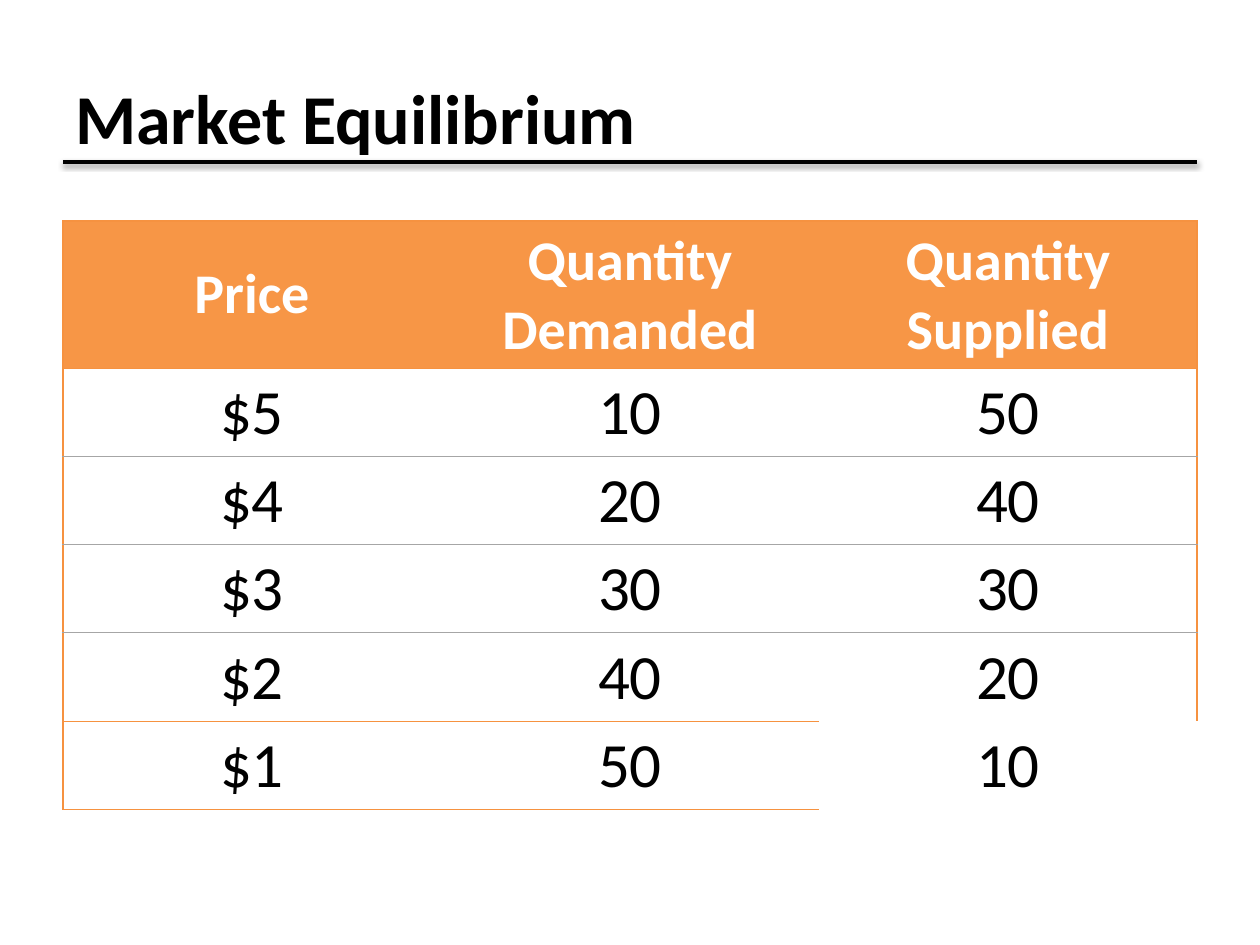
from lxml.etree import SubElement
from pptx import Presentation
from pptx.dml.color import RGBColor
from pptx.enum.shapes import MSO_CONNECTOR
from pptx.enum.text import MSO_ANCHOR, PP_ALIGN
from pptx.oxml.ns import qn
from pptx.util import Emu, Pt

SCALE = 914400 / 126
ORANGE = ("F69240", 0.75)
GRAY = ("A6A6A6", 0.5)


def px(*lengths):
    return [Emu(round(length * SCALE)) for length in lengths]


def style(font, values):
    for name, value in values.items():
        if name == "color":
            font.color.rgb = RGBColor.from_string(value)
        else:
            setattr(font, name, value)


presentation = Presentation()
presentation.slide_width, presentation.slide_height = px(1260, 945)
slide = presentation.slides.add_slide(presentation.slide_layouts[6])

rule = slide.shapes.add_connector(MSO_CONNECTOR.STRAIGHT, *px(63, 162, 1197, 162))
rule.line.width = Pt(2)
rule.line.color.rgb = RGBColor.from_string("000000")
effects = SubElement(rule._element.spPr, qn("a:effectLst"))
shadow = SubElement(effects, qn("a:outerShdw"), blurRad="40000", dist="20000", dir="5400000", rotWithShape="0")
shadow_color = SubElement(shadow, qn("a:srgbClr"), val="000000")
SubElement(shadow_color, qn("a:alpha"), val="38000")

title = slide.shapes.add_textbox(*px(63, 38, 1134, 158))
title_frame = title.text_frame
title_frame.word_wrap = True
title_frame.vertical_anchor = MSO_ANCHOR.MIDDLE
title_frame.text = "Market Equilibrium"
style(title_frame.paragraphs[0].font, {"name": "Calibri", "size": Pt(40), "bold": True, "color": "000000"})

rows = [
    ("Price", "Quantity Demanded", "Quantity Supplied"),
    ("$5", "10", "50"),
    ("$4", "20", "40"),
    ("$3", "30", "30"),
    ("$2", "40", "20"),
    ("$1", "50", "10"),
]
header_format = {"name": "Calibri", "size": Pt(32), "bold": True, "color": "FFFFFF"}
body_format = {"name": "Calibri", "size": Pt(36), "bold": False, "color": "000000"}
row_lines = [ORANGE, ORANGE, GRAY, GRAY, GRAY, ORANGE, ORANGE]

table_shape = slide.shapes.add_table(len(rows), 3, *px(63, 221, 1134, 588))
table = table_shape.table
table.horz_banding = False
for row_index, values in enumerate(rows):
    is_header = row_index == 0
    table.rows[row_index].height = px(136 if is_header else 82)[0]
    for column_index, value in enumerate(values):
        cell = table.cell(row_index, column_index)
        cell.text = value
        cell.vertical_anchor = MSO_ANCHOR.MIDDLE
        paragraph = cell.text_frame.paragraphs[0]
        paragraph.alignment = PP_ALIGN.CENTER
        style(paragraph.font, header_format if is_header else body_format)
        is_open = row_index == 5 and column_index == 2
        borders = {
            "a:lnL": ORANGE if column_index == 0 else None,
            "a:lnR": ORANGE if column_index == 2 and not is_open else None,
            "a:lnT": None if is_open else row_lines[row_index],
            "a:lnB": None if is_open or (row_index, column_index) == (4, 2) else row_lines[row_index + 1],
        }
        properties = cell._tc.get_or_add_tcPr()
        for tag, border in borders.items():
            if border:
                line = SubElement(properties, qn(tag), w=str(Pt(border[1])))
                fill = SubElement(line, qn("a:solidFill"))
                SubElement(fill, qn("a:srgbClr"), val=border[0])
            else:
                line = SubElement(properties, qn(tag), w="0")
                SubElement(line, qn("a:noFill"))
        if is_header:
            cell.fill.solid()
            cell.fill.fore_color.rgb = RGBColor.from_string("F79646")
        else:
            cell.fill.background()
table_shape.height = px(588)[0]

presentation.save("out.pptx")
